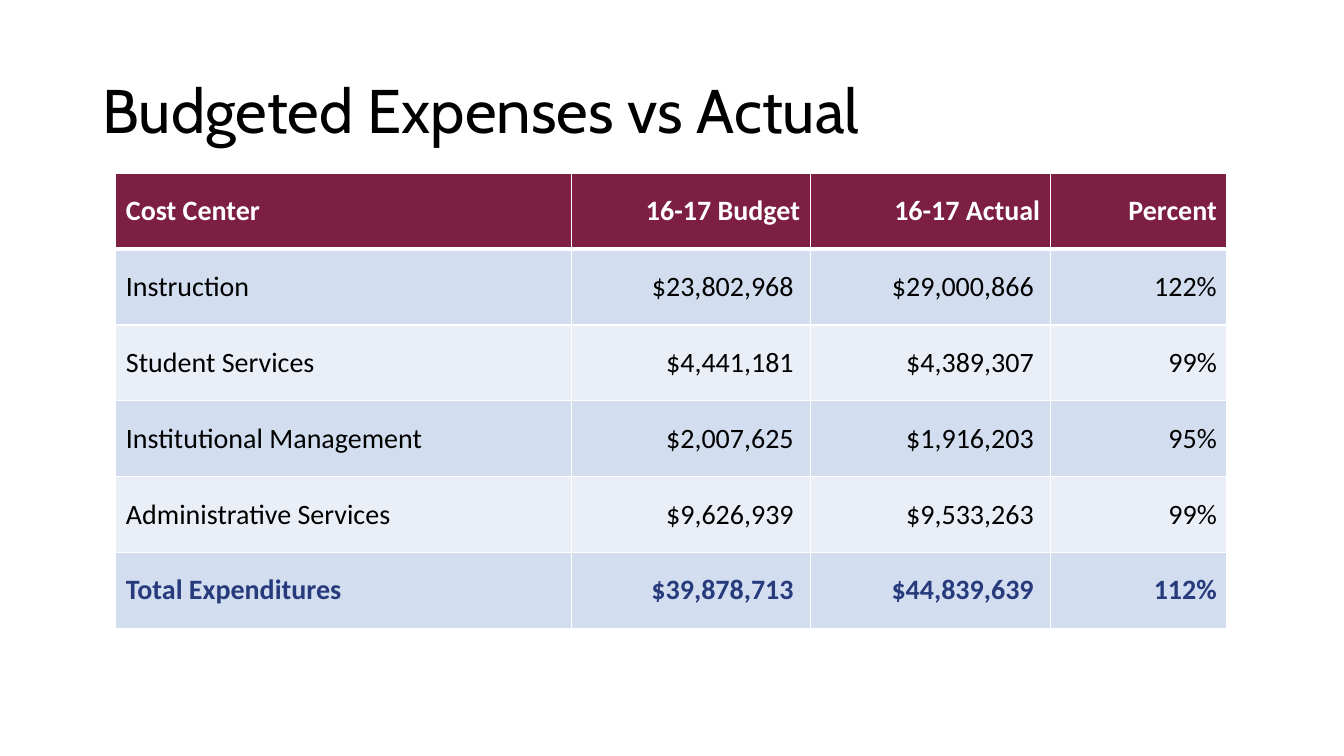
from lxml import etree
from pptx import Presentation
from pptx import util as u
from pptx.dml.color import RGBColor
from pptx.enum import text
from pptx.oxml import ns

WHITE = RGBColor(0xFF, 0xFF, 0xFF)
BLACK = RGBColor(0x00, 0x00, 0x00)
MAROON = RGBColor(0x7C, 0x1F, 0x43)
NAVY = RGBColor(0x26, 0x3A, 0x7C)
BANDS = (RGBColor(0xD2, 0xDE, 0xEF), RGBColor(0xEA, 0xEF, 0xF7))

HEADINGS = ("Cost Center", "16-17 Budget", "16-17 Actual", "Percent")
EXPENSES = (
    ("Instruction", 23802968, 29000866, 122),
    ("Student Services", 4441181, 4389307, 99),
    ("Institutional Management", 2007625, 1916203, 95),
    ("Administrative Services", 9626939, 9533263, 99),
    ("Total Expenditures", 39878713, 44839639, 112),
)
COLUMN_WIDTHS = (11.48, 6.02, 6.05, 4.45)
ROW_HEIGHT = 1.91


class BudgetSlide:
    """Holds the fonts and the current slide, and draws its title and table."""

    title_font = "Cabin"
    table_font = "Calibri"

    def __init__(self, presentation):
        self.slide = presentation.slides.add_slide(presentation.slide_layouts[6])

    def format_runs(self, paragraph, font_name, size, color, bold=False):
        for run in paragraph.runs:
            run.font.name = font_name
            run.font.size = u.Pt(size)
            run.font.bold = bold
            run.font.color.rgb = color

    def add_title(self, words, left, top, width, height):
        shape = self.slide.shapes.add_textbox(
            u.Cm(left), u.Cm(top), u.Cm(width), u.Cm(height))
        frame = shape.text_frame
        frame.text = words
        frame.word_wrap = True
        frame.vertical_anchor = text.MSO_ANCHOR.MIDDLE
        paragraph = frame.paragraphs[0]
        paragraph.line_spacing = 0.9
        self.format_runs(paragraph, self.title_font, 44, BLACK)

    def add_borders(self, cell, widths):
        properties = cell._tc.get_or_add_tcPr()
        for side, width in widths.items():
            line = etree.SubElement(
                properties, ns.qn(f"a:ln{side}"), w=str(u.Pt(width)))
            fill = etree.SubElement(line, ns.qn("a:solidFill"))
            etree.SubElement(fill, ns.qn("a:srgbClr"), val=str(WHITE))

    def fill_row(self, cells, values, fill, color, bold, top=1, bottom=1):
        for column, (cell, value) in enumerate(zip(cells, values)):
            cell.text_frame.text = value
            cell.vertical_anchor = text.MSO_ANCHOR.MIDDLE
            self.add_borders(cell, {"L": 1, "R": 1, "T": top, "B": bottom})
            cell.fill.solid()
            cell.fill.fore_color.rgb = fill
            paragraph = cell.text_frame.paragraphs[0]
            if column:
                paragraph.alignment = text.PP_ALIGN.RIGHT
            self.format_runs(paragraph, self.table_font, 20, color, bold)

    def add_expense_table(self, left, top):
        row_count = len(EXPENSES) + 1
        table = self.slide.shapes.add_table(
            row_count, len(HEADINGS), u.Cm(left), u.Cm(top),
            u.Cm(sum(COLUMN_WIDTHS)), u.Cm(ROW_HEIGHT * row_count)).table
        for column, width in zip(table.columns, COLUMN_WIDTHS):
            column.width = u.Cm(width)
        for row in table.rows:
            row.height = u.Cm(ROW_HEIGHT)
        self.fill_row(table.rows[0].cells, HEADINGS, MAROON, WHITE, True, bottom=3)
        for index, (center, budget, actual, percent) in enumerate(EXPENSES):
            is_total = index == len(EXPENSES) - 1
            values = (center, f" ${budget:,} ", f" ${actual:,} ", f"{percent}%")
            self.fill_row(
                table.rows[index + 1].cells, values, BANDS[index % 2],
                NAVY if is_total else BLACK, is_total, top=1 if index else 3)


def main():
    presentation = Presentation()
    presentation.slide_width = u.Cm(33.87)
    presentation.slide_height = u.Cm(19.05)
    budget_slide = BudgetSlide(presentation)
    budget_slide.add_title("Budgeted Expenses vs Actual", 2.33, 1.02, 29.21, 3.68)
    budget_slide.add_expense_table(2.92, 4.37)
    presentation.save("out.pptx")


if __name__ == "__main__":
    main()
